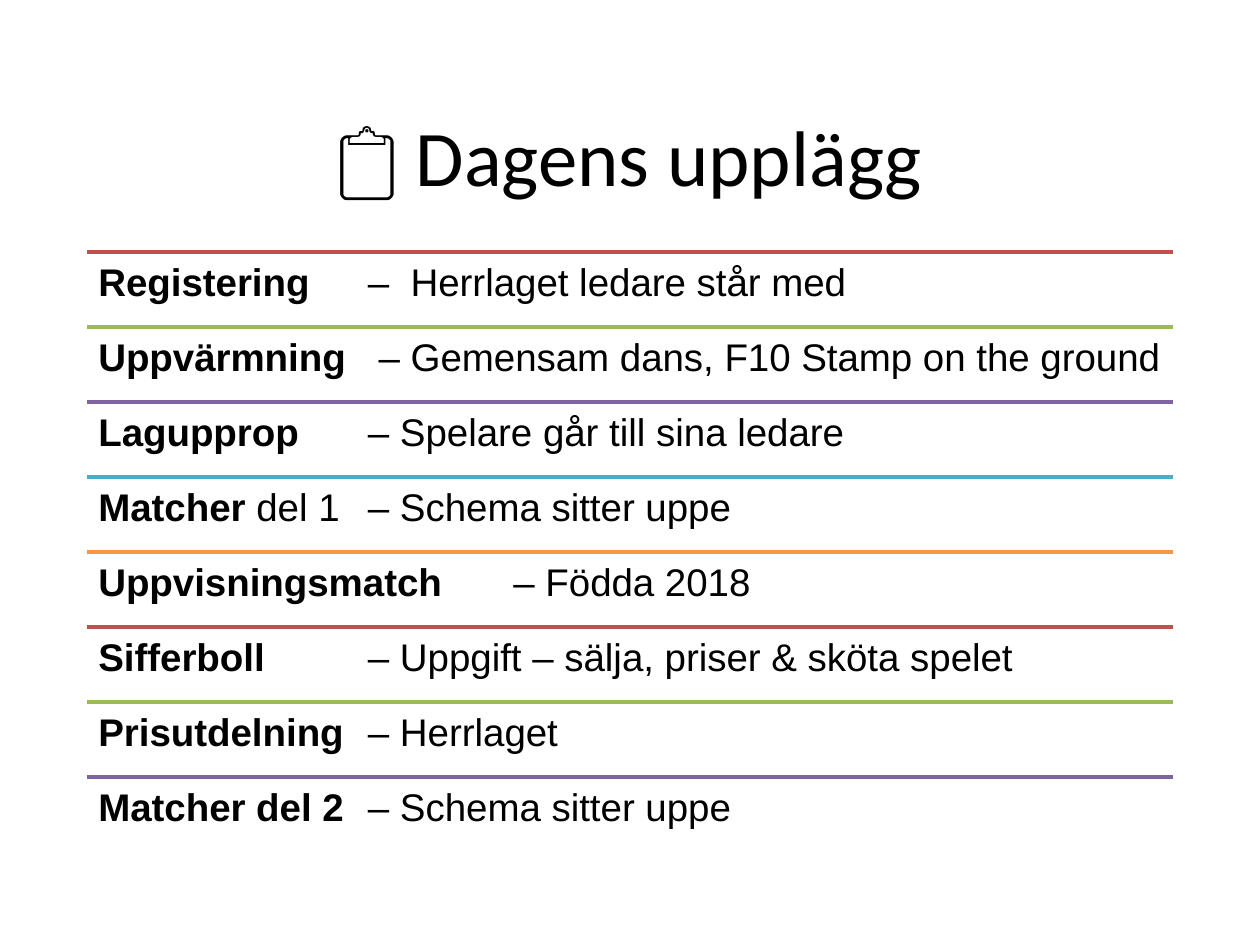
from lxml import etree
from pptx import Presentation
from pptx.dml.color import RGBColor
from pptx.enum.shapes import MSO_CONNECTOR
from pptx.enum.text import MSO_ANCHOR, PP_ALIGN
from pptx.oxml.ns import qn
from pptx.util import Inches, Pt

STRAIGHT = MSO_CONNECTOR.STRAIGHT
TOP, MIDDLE = MSO_ANCHOR.TOP, MSO_ANCHOR.MIDDLE
LEFT, CENTER = PP_ALIGN.LEFT, PP_ALIGN.CENTER

# Page and agenda grid, in inches
WIDE, HIGH = 10, 7.5
SIDE = 0.69
SPAN = WIDE - 2 * SIDE
START, STEP = 2, 4.76 / 8
TAB = 1.07

RULES = ["C0504D", "9BBB59", "8064A2", "4BACC6", "F79646"]

# Bold label, then the rest of the line
AGENDA = [
    ("Registering", " \t–  Herrlaget ledare står med"),
    ("Uppvärmning\t", " – Gemensam dans, F10 Stamp on the ground"),
    ("Lagupprop", " \t– Spelare går till sina ledare"),
    ("Matcher", " del 1 \t– Schema sitter uppe"),
    ("Uppvisningsmatch\t", " – Födda 2018"),
    ("Sifferboll\t", "– Uppgift – sälja, priser & sköta spelet"),
    ("Prisutdelning\t", "– Herrlaget"),
    ("Matcher del 2\t", "– Schema sitter uppe"),
]


def color(code):
    return RGBColor.from_string(code)


class Page:
    ink = "000000"
    head = ("Calibri", 45)
    body = ("Arial", 22)

    def __init__(self, slide):
        self.slide = slide

    def box(self, top, high, pads, anchor):
        """Add a full-width text box and return its first paragraph."""
        shape = self.slide.shapes.add_textbox(
            Inches(SIDE), Inches(top), Inches(SPAN), Inches(high))
        frame = shape.text_frame
        frame.word_wrap = True
        frame.vertical_anchor = anchor
        frame.margin_left = frame.margin_right = Inches(pads[0])
        frame.margin_top = frame.margin_bottom = Inches(pads[1])
        return frame.paragraphs[0]

    def font(self, para, face):
        para.font.name, para.font.size = face[0], Pt(face[1])
        para.font.color.rgb = color(self.ink)

    def title(self, text):
        para = self.box(0.61, 1.24, (0.1, 0.05), MIDDLE)
        para.alignment = CENTER
        para.add_run().text = text
        self.font(para, self.head)

    def rule(self, row, code):
        top = Inches(START + row * STEP)
        line = self.slide.shapes.add_connector(
            STRAIGHT, Inches(SIDE), top, Inches(SIDE + SPAN), top)
        line.line.color.rgb = color(code)
        line.line.width = Pt(2)
        etree.SubElement(line._element.spPr, qn("a:effectLst"))

    def entry(self, row, label, rest):
        para = self.box(START + row * STEP, STEP, (0.09, 0.09), TOP)
        para.alignment = LEFT
        para.line_spacing = 0.9
        # Tab stops at even steps
        tabs = etree.SubElement(para._p.get_or_add_pPr(), qn("a:tabLst"))
        for stop in range(1, 5):
            etree.SubElement(tabs, qn("a:tab"),
                             pos=str(Inches(stop * TAB)), algn="l")
        self.font(para, self.body)
        for text, bold in ((label, True), (rest, False)):
            run = para.add_run()
            run.text = text
            run.font.bold = bold


def main():
    deck = Presentation()
    deck.slide_width, deck.slide_height = Inches(WIDE), Inches(HIGH)
    page = Page(deck.slides.add_slide(deck.slide_layouts[6]))

    page.title("📋 Dagens upplägg")

    # Agenda: a coloured rule above each entry
    for row, (label, rest) in enumerate(AGENDA):
        page.rule(row, RULES[row % len(RULES)])
        page.entry(row, label, rest)

    deck.save("out.pptx")


if __name__ == "__main__":
    main()
